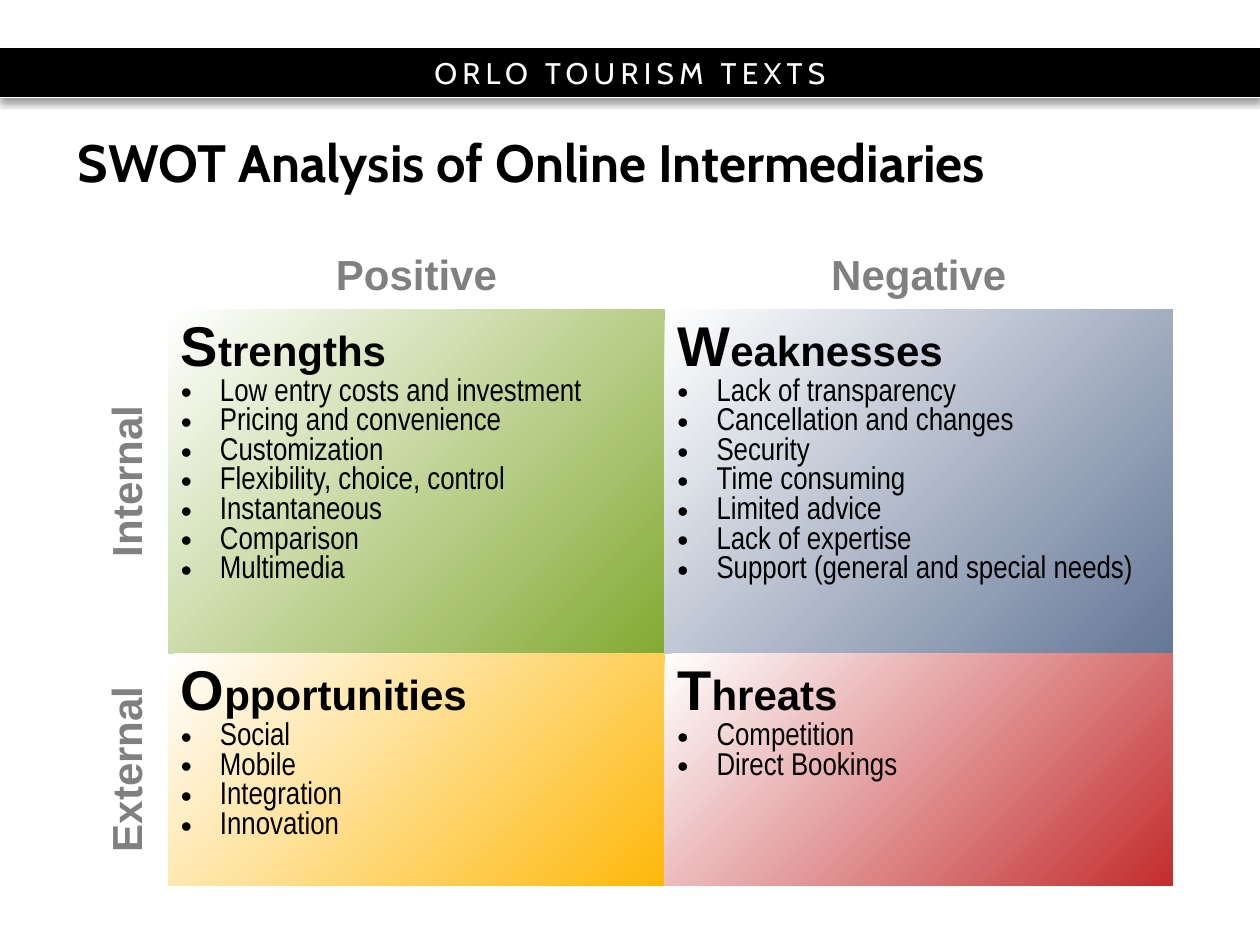
"""Build a slide with a SWOT matrix of online intermediaries."""
from dataclasses import dataclass

from lxml import etree
from pptx import Presentation
from pptx import util as u
from pptx.dml.color import RGBColor
from pptx.enum import shapes, text
from pptx.oxml import ns, parse_xml


@dataclass(frozen=True)
class Theme:
    ink: str = "000000"
    paper: str = "FFFFFF"
    label: str = "808080"
    strengths: str = "84AA33"
    weaknesses: str = "657797"
    opportunities: str = "FEB80A"
    threats: str = "C32D2E"
    display: str = "Cabin"
    heading: str = "Arial"
    body: str = "Arial Narrow"
    band_size: int = 17
    title_size: int = 30
    initial_size: int = 32
    heading_size: int = 24
    body_size: int = 18


theme = Theme()


def set_font(paragraph, name, size, color, bold=False):
    font = paragraph.font
    font.name, font.size, font.bold = name, u.Pt(size), bold
    font.color.rgb = RGBColor.from_string(color)


def corner_gradient(color):
    return parse_xml(
        f'<a:gradFill {ns.nsdecls("a")} rotWithShape="1"><a:gsLst>'
        f'<a:gs pos="0"><a:srgbClr val="{color}"/></a:gs>'
        f'<a:gs pos="100000"><a:srgbClr val="{theme.paper}"/></a:gs></a:gsLst>'
        '<a:path path="circle"><a:fillToRect l="100000" t="100000"/></a:path></a:gradFill>'
    )


deck = Presentation()
deck.slide_width, deck.slide_height = u.Cm(25.4), u.Cm(19.05)
slide = deck.slides.add_slide(deck.slide_layouts[6])

band_top, band_height = u.Cm(0.95), u.Cm(1.02)
band = slide.shapes.add_shape(
    shapes.MSO_SHAPE.RECTANGLE, 0, band_top, deck.slide_width, band_height)
band.fill.solid()
band.fill.fore_color.rgb = RGBColor.from_string(theme.ink)
band.line.fill.background()
band.shadow.inherit = False
band._element.spPr.find(ns.qn("a:effectLst")).append(parse_xml(
    f'<a:outerShdw {ns.nsdecls("a")} blurRad="{u.Pt(4)}" dist="{u.Pt(3)}" dir="5400000" '
    f'rotWithShape="0"><a:srgbClr val="{theme.ink}"><a:alpha val="40000"/></a:srgbClr>'
    '</a:outerShdw>'))
band.text_frame.vertical_anchor = text.MSO_ANCHOR.MIDDLE
series = band.text_frame.paragraphs[0]
series.alignment = text.PP_ALIGN.CENTER
set_font(series, theme.display, theme.band_size, theme.paper)
series_name = series.add_run()
series_name.text = "ORLO TOURISM TEXTS"
series_name._r.get_or_add_rPr().set("spc", "300")

for edge_y in (band_top, band_top + band_height):
    edge = slide.shapes.add_connector(
        shapes.MSO_CONNECTOR.STRAIGHT, 0, edge_y, deck.slide_width, edge_y)
    edge.line.color.rgb = RGBColor.from_string(theme.paper)
    edge.line.width = u.Pt(0.75)
    etree.SubElement(edge._element.spPr, ns.qn("a:effectLst"))

title_area = slide.shapes.add_textbox(u.Cm(1.32), u.Cm(2.72), u.Cm(22.99), u.Cm(1.22))
title_area.text_frame.word_wrap = True
title_area.text_frame.vertical_anchor = text.MSO_ANCHOR.MIDDLE
title = title_area.text_frame.paragraphs[0]
title.text = "SWOT Analysis of Online Intermediaries"
title.line_spacing = u.Pt(32)
set_font(title, theme.display, theme.title_size, theme.ink, bold=True)

widths, heights = (1.42, 10.01, 10.24), (1.09, 5.33, 4.67)
matrix = slide.shapes.add_table(
    3, 3, u.Cm(1.97), u.Cm(4.96), u.Cm(sum(widths)), u.Cm(sum(heights)))
swot = matrix.table
swot.first_row = swot.horz_banding = False
NO_STYLE_NO_GRID = "{2D5ABB26-0587-4C30-8999-92F81FD0307C}"
swot._tbl.tblPr.find(ns.qn("a:tableStyleId")).text = NO_STYLE_NO_GRID
for column, width in zip(swot.columns, widths):
    column.width = u.Cm(width)
for row, height in zip(swot.rows, heights):
    row.height = u.Cm(height)
matrix.height = u.Cm(12.88)

axis_labels = {(0, 1): "Positive", (0, 2): "Negative", (1, 0): "Internal", (2, 0): "External"}
quadrants = {
    (1, 1): ("Strengths", theme.strengths, (
        "Low entry costs and investment", "Pricing and convenience", "Customization",
        "Flexibility, choice, control", "Instantaneous", "Comparison", "Multimedia")),
    (1, 2): ("Weaknesses", theme.weaknesses, (
        "Lack of transparency", "Cancellation and changes", "Security", "Time consuming",
        "Limited advice", "Lack of expertise", "Support (general and special needs)")),
    (2, 1): ("Opportunities", theme.opportunities, (
        "Social", "Mobile", "Integration", "Innovation")),
    (2, 2): ("Threats", theme.threats, ("Competition", "Direct Bookings")),
}

swot.cell(0, 0).fill.background()
for position, label in axis_labels.items():
    cell = swot.cell(*position)
    cell.fill.background()
    if position[1] == 0:
        cell._tc.get_or_add_tcPr().set("vert", "vert270")
    axis = cell.text_frame.paragraphs[0]
    axis.text = label
    axis.alignment = text.PP_ALIGN.CENTER
    set_font(axis, theme.heading, theme.heading_size, theme.label, bold=True)

for position, (name, color, points) in quadrants.items():
    cell = swot.cell(*position)
    cell._tc.get_or_add_tcPr().append(corner_gradient(color))
    heading = cell.text_frame.paragraphs[0]
    set_font(heading, theme.heading, theme.heading_size, theme.ink, bold=True)
    for part, size in ((name[0], theme.initial_size), (name[1:], theme.heading_size)):
        run = heading.add_run()
        run.text = part
        run.font.size = u.Pt(size)
    for point in points:
        item = cell.text_frame.add_paragraph()
        item.text = point
        properties = item._p.get_or_add_pPr()
        properties.set("marL", str(u.Cm(0.79)))
        properties.set("indent", str(-u.Cm(0.79)))
        etree.SubElement(properties, ns.qn("a:buFont"), typeface=theme.heading)
        etree.SubElement(properties, ns.qn("a:buChar"), char="•")
        set_font(item, theme.body, theme.body_size, theme.ink)

deck.save("out.pptx")
